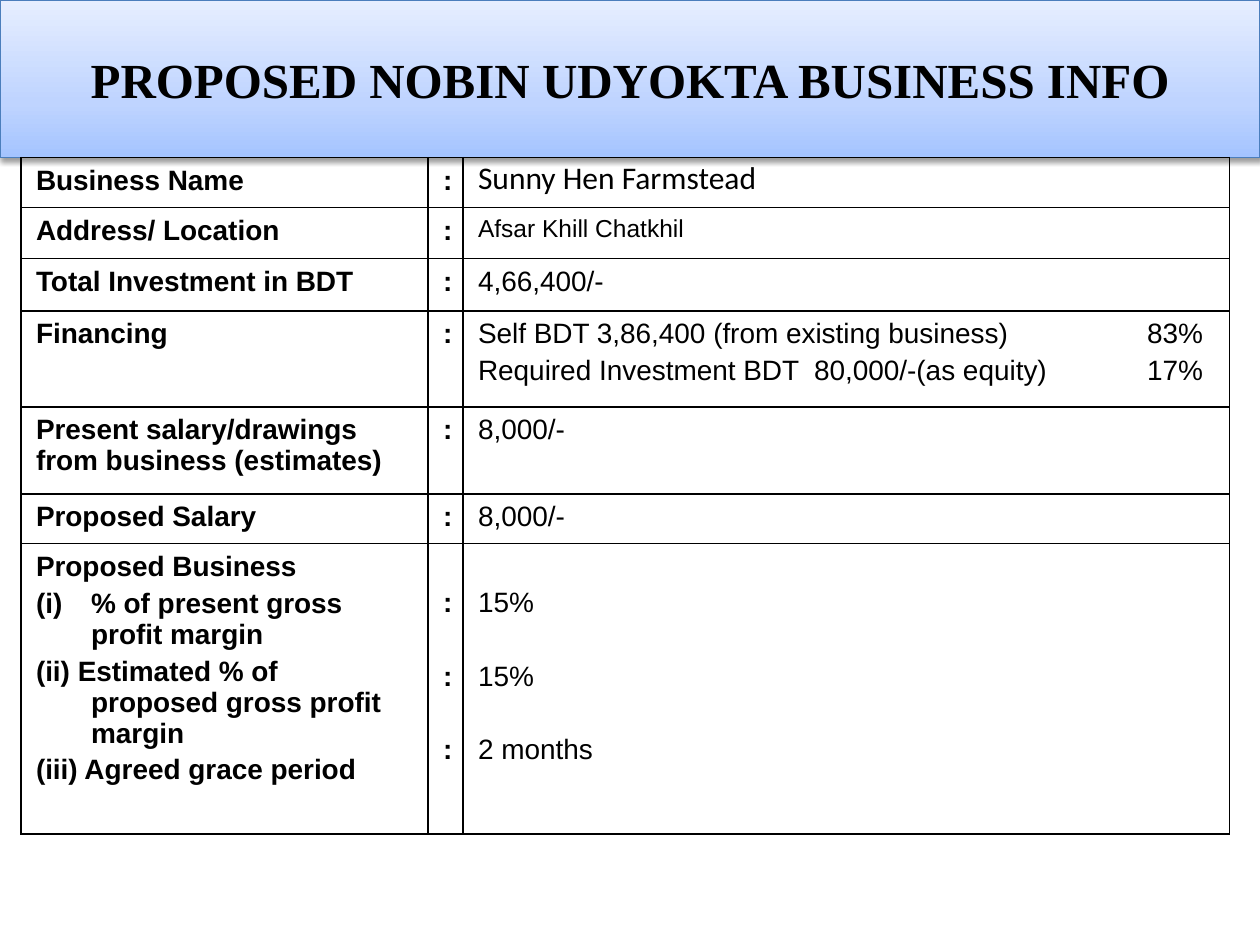
from lxml import etree
from pptx import Presentation, oxml
from pptx import util as u
from pptx.dml.color import RGBColor
from pptx.enum import shapes, text
from pptx.oxml.ns import nsdecls, qn

COLOURS = {"ink": "000000", "rim": "4B7EBC", "low": "A4C4FF", "mid": "BFD4FF", "high": "E6EEFF"}
COLUMNS = [232.6, 20, 438]
INSET, PAD, HANG, LINE_GAP = 8.6, 4.4, 31.5, 3.2
SHARE_TAB = 414.3

ROWS = [
    (28.5, "Business Name", ["Sunny Hen Farmstead"], {"size": 18, "face": "Calibri", "spacing": 0.8}),
    (29.2, "Address/ Location", ["Afsar Khill Chatkhil"], {"size": 14}),
    (30, "Total Investment in BDT", ["4,66,400/-"], {}),
    (54.8, "Financing", ["Self BDT 3,86,400 (from existing business)\t83%",
                         "Required Investment BDT  80,000/-(as equity)\t17%"], {"tab": SHARE_TAB}),
    (49.7, "Present salary/drawings from business (estimates)", ["8,000/-"], {}),
    (28.5, "Proposed Salary", ["8,000/-"], {}),
]
PLAN_HEIGHT = 166
PLAN_TERMS = ["% of present gross profit margin",
              "(ii) Estimated % of proposed gross profit margin",
              "(iii) Agreed grace period"]
PLAN_VALUES = ["15%", "15%", "2 months"]
PLAN_DROP, PLAN_GAP = 20.8, 24.2


def add_run(paragraph, words, size=16, face="Arial", bold=False):
    """Add one styled run to a paragraph."""
    run = paragraph.add_run()
    run.text = words
    run.font.size, run.font.name, run.font.bold = u.Pt(size), face, bold
    run.font.color.rgb = RGBColor.from_string(COLOURS["ink"])


def add_banner(slide, title):
    """Draw the gradient title band with its soft shadow."""
    banner = slide.shapes.add_shape(shapes.MSO_SHAPE.RECTANGLE, 0, 0, u.Pt(720), u.Pt(90))
    banner.shadow.inherit = False
    banner.line.color.rgb = RGBColor.from_string(COLOURS["rim"])
    banner.line.width = u.Pt(0.75)
    stops = "".join(f'<a:gs pos="{place * 1000}"><a:srgbClr val="{COLOURS[name]}"/></a:gs>'
                    for place, name in [(0, "low"), (35, "mid"), (100, "high")])
    gradient = oxml.parse_xml(f'<a:gradFill {nsdecls("a")} rotWithShape="1"><a:gsLst>{stops}</a:gsLst>'
                              '<a:lin ang="16200000" scaled="0"/></a:gradFill>')
    properties = banner._element.spPr
    properties.find(qn("a:prstGeom")).addnext(gradient)
    properties.find(qn("a:effectLst")).append(oxml.parse_xml(
        f'<a:outerShdw {nsdecls("a")} blurRad="{u.Pt(3.1)}" dist="{u.Pt(1.6)}" dir="5400000" rotWithShape="0">'
        f'<a:srgbClr val="{COLOURS["ink"]}"><a:alpha val="38000"/></a:srgbClr></a:outerShdw>'))
    frame = banner.text_frame
    frame.word_wrap = True
    frame.vertical_anchor = text.MSO_ANCHOR.MIDDLE
    heading = frame.paragraphs[0]
    heading.alignment = text.PP_ALIGN.CENTER
    add_run(heading, title, 28, "Times New Roman", True)


def frame_cell(cell):
    """Give a cell its insets, clear fill and thin border."""
    cell.margin_left = cell.margin_right = u.Pt(INSET)
    cell.margin_top = cell.margin_bottom = u.Pt(PAD)
    cell.fill.background()
    properties = cell._tc.get_or_add_tcPr()
    for place, side in enumerate(["lnL", "lnR", "lnT", "lnB"]):
        properties.insert(place, oxml.parse_xml(
            f'<a:{side} {nsdecls("a")} w="{u.Pt(1)}"><a:solidFill><a:srgbClr val="{COLOURS["ink"]}"/>'
            f'</a:solidFill></a:{side}>'))


def write_cell(cell, lines, gap=LINE_GAP, spacing=None, tab=None, **style):
    """Write lines as paragraphs, spaced after the first."""
    for index, words in enumerate(lines):
        paragraph = cell.text_frame.paragraphs[0] if index == 0 else cell.text_frame.add_paragraph()
        if tab:
            stops = etree.SubElement(paragraph._p.get_or_add_pPr(), qn("a:tabLst"))
            etree.SubElement(stops, qn("a:tab"), pos=str(u.Pt(tab)), algn="r")
        if index:
            paragraph.space_before = u.Pt(gap)
        if spacing:
            paragraph.line_spacing = spacing
        add_run(paragraph, words, **style)


def write_plan(label, colon, value):
    """Fill the last row with its numbered terms and their values."""
    write_cell(label, ["Proposed Business"] + PLAN_TERMS, bold=True)
    terms = label.text_frame.paragraphs[1:]
    for term in terms:
        properties = term._p.get_or_add_pPr()
        properties.set("marL", str(u.Pt(HANG)))
        properties.set("indent", str(-u.Pt(HANG)))
    etree.SubElement(terms[0]._p.pPr, qn("a:buAutoNum"), type="romanLcParenBoth")
    for cell in (colon, value):
        cell.margin_top = u.Pt(PAD + PLAN_DROP)
    write_cell(colon, [":"] * len(PLAN_VALUES), PLAN_GAP, bold=True)
    write_cell(value, PLAN_VALUES, PLAN_GAP)


def add_info_table(slide):
    """Build the business information table."""
    heights = [row[0] for row in ROWS] + [PLAN_HEIGHT]
    table = slide.shapes.add_table(len(heights), len(COLUMNS), u.Pt(12), u.Pt(90),
                                   u.Pt(sum(COLUMNS)), u.Pt(sum(heights))).table
    table.first_row = table.horz_banding = False
    for column, width in zip(table.columns, COLUMNS):
        column.width = u.Pt(width)
    for row, height in zip(table.rows, heights):
        row.height = u.Pt(height)
    for cell in table.iter_cells():
        frame_cell(cell)
    for row, (_, label, values, style) in zip(table.rows, ROWS):
        write_cell(row.cells[0], [label], bold=True)
        write_cell(row.cells[1], [":"], bold=True)
        write_cell(row.cells[2], values, **style)
    write_plan(*table.rows[len(ROWS)].cells)


def main():
    """Build and save the slide."""
    deck = Presentation()
    deck.slide_width, deck.slide_height = u.Pt(720), u.Pt(540)
    slide = deck.slides.add_slide(deck.slide_layouts[6])
    add_banner(slide, "PROPOSED NOBIN UDYOKTA BUSINESS INFO")
    add_info_table(slide)
    deck.save("out.pptx")


if __name__ == "__main__":
    main()
